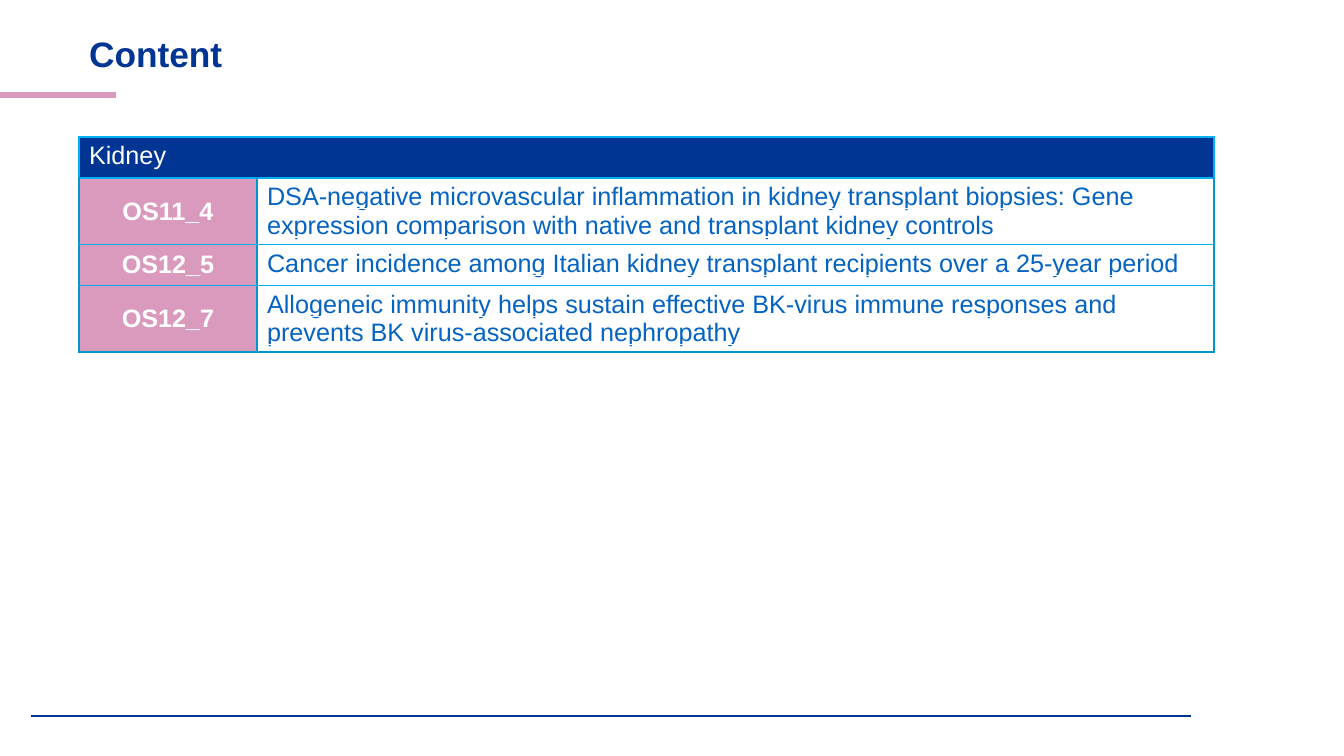
import pptx
import pptx.util
import pptx.dml.color
import pptx.enum.shapes
import pptx.enum.text
import pptx.oxml
import pptx.oxml.ns

PX = 914400 / 100.8
NAVY, PINK, WHITE, LINK = "003594", "DA9ABD", "FFFFFF", "0563C1"
SKY, TEAL = "00B0F0", "0097CE"
NS = pptx.oxml.ns.nsdecls("a")


def color(code):
    return pptx.dml.color.RGBColor.from_string(code)


def write(frame, text, size=18, ink=WHITE, bold=False, align=None, space=None, link=False):
    para = frame.paragraphs[0]
    para.alignment = align
    para.line_spacing = space
    run = para.add_run()
    run.text = text
    font = run.font
    font.name = "Arial"
    font.size = pptx.util.Pt(size)
    font.bold = bold
    font.color.rgb = color(ink)
    if link:
        font.underline = True
        latin = run._r.rPr.find(pptx.oxml.ns.qn("a:latin"))
        latin.addprevious(pptx.oxml.parse_xml(
            f'<a:uFill {NS}><a:solidFill><a:srgbClr val="{WHITE}"/></a:solidFill></a:uFill>'))


deck = pptx.Presentation()
deck.slide_width = round(1344 * PX)
deck.slide_height = round(756 * PX)
slide = deck.slides.add_slide(deck.slide_layouts[5])

for left, right, y, ink, width in [(0, 116, 95, PINK, 4.5), (31, 1191, 716, NAVY, 1.5)]:
    rule = slide.shapes.add_connector(
        pptx.enum.shapes.MSO_CONNECTOR.STRAIGHT,
        round(left * PX), round(y * PX), round(right * PX), round(y * PX))
    rule.line.color.rgb = color(ink)
    rule.line.width = pptx.util.Pt(width)
    rule._element.spPr.append(pptx.oxml.parse_xml(f"<a:effectLst {NS}/>"))

title = slide.shapes.title
title.left, title.top, title.width, title.height = [round(n * PX) for n in (79, 34, 1159, 44)]
title.text_frame.vertical_anchor = pptx.enum.text.MSO_ANCHOR.MIDDLE
write(title.text_frame, "Content", size=25.2, ink=NAVY, bold=True,
      align=pptx.enum.text.PP_ALIGN.LEFT, space=0.9)

talks = [
    ("OS11_4", "DSA-negative microvascular inflammation in kidney transplant biopsies: "
     "Gene expression comparison with native and transplant kidney controls"),
    ("OS12_5", "Cancer incidence among Italian kidney transplant recipients over a 25-year period"),
    ("OS12_7", "Allogeneic immunity helps sustain effective BK-virus immune responses "
     "and prevents BK virus-associated nephropathy"),
]
widths, heights = [178, 957], [41, 66, 41, 66]
table = slide.shapes.add_table(
    len(heights), len(widths), round(79 * PX), round(137 * PX),
    round(sum(widths) * PX), round(sum(heights) * PX)).table
for col, width in zip(table.columns, widths):
    col.width = round(width * PX)
for row, height in zip(table.rows, heights):
    row.height = round(height * PX)

for r in range(len(heights)):
    for c in range(len(widths)):
        cell = table.cell(r, c)
        side = SKY if r == 0 else TEAL
        base = TEAL if r == len(talks) else SKY
        for tag, ink in [("lnL", side), ("lnR", side), ("lnT", SKY), ("lnB", base)]:
            cell._tc.get_or_add_tcPr().append(pptx.oxml.parse_xml(
                f'<a:{tag} {NS} w="12700"><a:solidFill><a:srgbClr val="{ink}"/></a:solidFill></a:{tag}>'))
        cell.fill.solid()
        cell.fill.fore_color.rgb = color(NAVY if r == 0 else (PINK, WHITE)[c])

table.cell(0, 0).merge(table.cell(0, 1))
write(table.cell(0, 0).text_frame, "Kidney")
for r, (code, topic) in enumerate(talks, 1):
    table.cell(r, 0).vertical_anchor = pptx.enum.text.MSO_ANCHOR.MIDDLE
    write(table.cell(r, 0).text_frame, code, bold=True, align=pptx.enum.text.PP_ALIGN.CENTER)
    write(table.cell(r, 1).text_frame, topic, ink=LINK, link=True)

deck.save("out.pptx")
